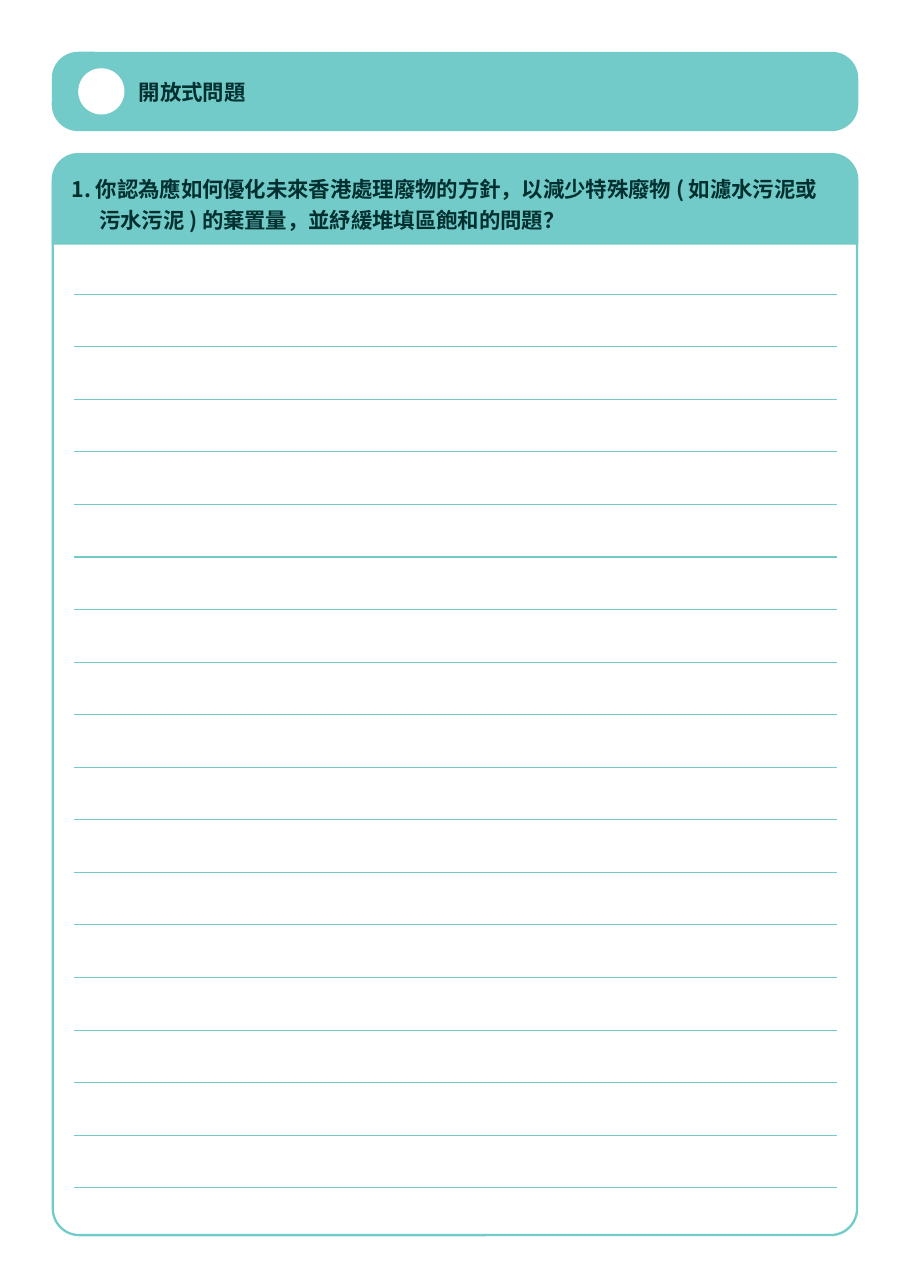
from dataclasses import dataclass
from typing import Optional

from lxml.etree import SubElement
from pptx import Presentation
from pptx.dml.color import RGBColor
from pptx.enum.shapes import MSO_CONNECTOR as Connector, MSO_SHAPE as Shape
from pptx.enum.text import MSO_ANCHOR as Anchor, MSO_AUTO_SIZE as AutoSize, PP_ALIGN as Align
from pptx.oxml.ns import qn
from pptx.util import Inches, Pt


@dataclass(frozen=True)
class Theme:
    teal: RGBColor = RGBColor(0x72, 0xCB, 0xC9)
    ink: RGBColor = RGBColor(0x00, 0x2F, 0x2F)
    white: RGBColor = RGBColor(0xFF, 0xFF, 0xFF)
    font: str = "Noto Sans CJK SC"
    size: Pt = Pt(14)
    line_pitch: Pt = Pt(20.25)
    tracking: str = "-10"
    frame_width: Pt = Pt(1.5)
    rule_width: Pt = Pt(0.75)
    corner: Inches = Inches(0.24)


@dataclass(frozen=True)
class Area:
    """A rectangle in percent of the slide's width and height."""
    left: float
    top: float
    width: float
    height: float


@dataclass(frozen=True)
class Panel:
    area: Area
    shape: Shape
    fill: Optional[RGBColor] = None
    outline: Optional[RGBColor] = None


THEME = Theme()
WIDTH, HEIGHT = Inches(8.26), Inches(11.69)

TITLE = "開放式問題"
QUESTION = (
    "1. 你認為應如何優化未來香港處理廢物的方針，以減少特殊廢物 ( 如濾水污泥或污水污泥 ) "
    "的棄置量，並紓緩堆填區飽和的問題？"
)
TITLE_AREA = Area(15.25, 5.77, 75.67, 2.5)
QUESTION_AREA = Area(7.87, 13.29, 83.05, 5)

PANELS = [
    Panel(Area(5.69, 4.02, 88.62, 6.16), Shape.ROUNDED_RECTANGLE, fill=THEME.teal),
    Panel(Area(8.6, 5.3, 5.08, 3.59), Shape.OVAL, fill=THEME.white),
    Panel(Area(5.69, 11.89, 88.62, 7.1), Shape.ROUND_2_SAME_RECTANGLE, fill=THEME.teal),
    Panel(Area(5.81, 11.98, 88.38, 83.92), Shape.ROUNDED_RECTANGLE, outline=THEME.teal),
]

# Writing rules, in percent of the slide
RULE_COUNT = 18
RULE_LEFT, RULE_RIGHT = 8.11, 92.01
RULE_FIRST, RULE_LAST = 22.84, 92.22


def across(share: float) -> int:
    return round(WIDTH * share / 100)


def down(share: float) -> int:
    return round(HEIGHT * share / 100)


def place(area: Area) -> tuple[int, int, int, int]:
    return across(area.left), down(area.top), across(area.width), down(area.height)


def apply(target: object, values: dict) -> None:
    for name, value in values.items():
        setattr(target, name, value)


def draw_panel(page, panel: Panel) -> None:
    shape = page.shapes.add_shape(panel.shape, *place(panel.area))
    shape.shadow.inherit = False
    if panel.shape != Shape.OVAL:
        shape.adjustments[0] = THEME.corner / min(shape.width, shape.height)
    if panel.fill is None:
        shape.fill.background()
    else:
        shape.fill.solid()
        shape.fill.fore_color.rgb = panel.fill
    if panel.outline is None:
        shape.line.fill.background()
    else:
        shape.line.color.rgb = panel.outline
        shape.line.width = THEME.frame_width


def draw_rule(page, share: float) -> None:
    height = down(share)
    rule = page.shapes.add_connector(
        Connector.STRAIGHT, across(RULE_LEFT), height, across(RULE_RIGHT), height)
    rule.line.color.rgb = THEME.teal
    rule.line.width = THEME.rule_width
    SubElement(rule.element.spPr, qn("a:effectLst"))


def write(box, area: Area, text: str, hanging: int = 0) -> None:
    apply(box, dict(zip(("left", "top", "width", "height"), place(area))))
    frame = box.text_frame
    apply(frame, {
        "margin_left": 0, "margin_top": 0, "margin_right": 0, "margin_bottom": 0,
        "word_wrap": True, "auto_size": AutoSize.NONE, "vertical_anchor": Anchor.TOP,
    })
    para = frame.paragraphs[0]
    apply(para, {"alignment": Align.LEFT, "line_spacing": THEME.line_pitch,
                 "space_before": Pt(0)})
    properties = para._p.get_or_add_pPr()
    properties.set("marL", str(hanging))
    properties.set("indent", str(-hanging))
    span = para.add_run()
    span.text = text
    apply(span.font, {"name": THEME.font, "size": THEME.size, "bold": True})
    span.font.color.rgb = THEME.ink
    run_properties = span._r.get_or_add_rPr()
    run_properties.set("spc", THEME.tracking)
    SubElement(run_properties, qn("a:ea"), typeface=THEME.font)


def main() -> None:
    deck = Presentation()
    apply(deck, {"slide_width": WIDTH, "slide_height": HEIGHT})
    page = deck.slides.add_slide(deck.slide_layouts[5])

    # Title band, question header and answer frame
    for panel in PANELS:
        draw_panel(page, panel)

    # Evenly spaced writing rules
    step = (RULE_LAST - RULE_FIRST) / (RULE_COUNT - 1)
    for index in range(RULE_COUNT):
        draw_rule(page, RULE_FIRST + index * step)

    # Title, brought in front of its band, and the question
    title = page.shapes.title
    title.element.getparent().append(title.element)
    write(title, TITLE_AREA, TITLE)
    question = page.shapes.add_textbox(*place(QUESTION_AREA))
    write(question, QUESTION_AREA, QUESTION, hanging=Inches(0.25))

    deck.save("out.pptx")


if __name__ == "__main__":
    main()
